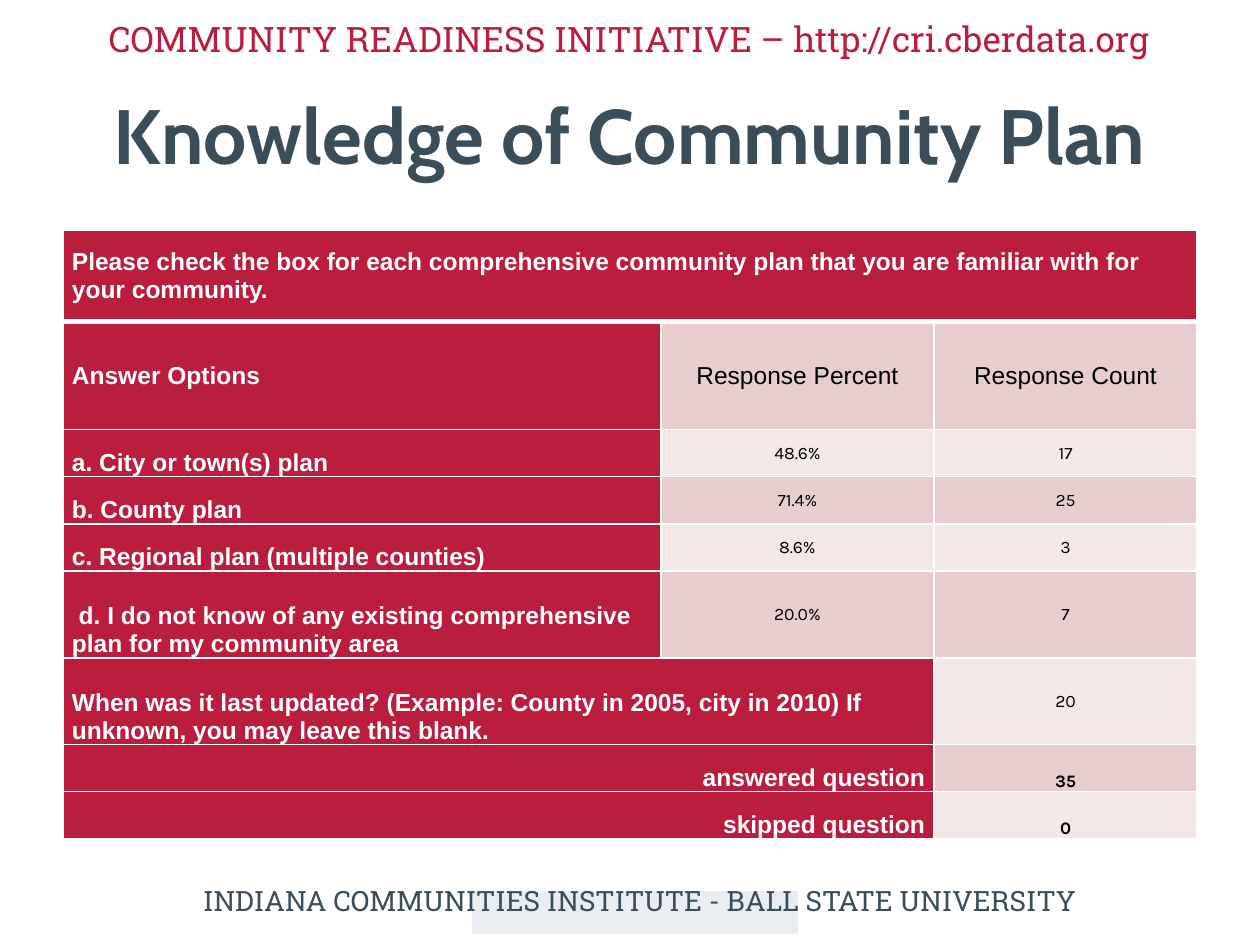
from dataclasses import dataclass

from lxml.etree import SubElement
from pptx import Presentation
from pptx.dml.color import RGBColor
from pptx.enum.shapes import MSO_SHAPE
from pptx.enum.text import MSO_ANCHOR, MSO_AUTO_SIZE, PP_ALIGN
from pptx.oxml.ns import qn
from pptx.util import Cm, Pt


@dataclass(frozen=True)
class Theme:
    red: str = "BA1D3D"
    slate: str = "3B4D59"
    mist: str = "E9ECF1"
    rose: str = "E7CDCE"
    blush: str = "F3E8E8"
    white: str = "FFFFFF"
    black: str = "000000"
    slab: str = "Roboto Slab"
    head: str = "Cabin"
    label: str = "Arial"
    value: str = "Karla"
    title_size: int = 44
    top_size: int = 20
    foot_size: int = 16
    label_size: int = 14
    value_size: int = 10


THEME = Theme()
LEFT, MID, RIGHT = PP_ALIGN.LEFT, PP_ALIGN.CENTER, PP_ALIGN.RIGHT
COLS = [12.05, 5.51, 5.3]
ROWS = [1.83, 2.18, 0.95, 0.95, 0.95, 1.75, 1.75, 0.95, 0.95]
PLANS = [
    ("a. City or town(s) plan", "48.6%", "17"),
    ("b. County plan", "71.4%", "25"),
    ("c. Regional plan (multiple counties)", "8.6%", "3"),
    (" d. I do not know of any existing comprehensive plan for my community area", "20.0%", "7"),
]
TOTALS = [
    ("When was it last updated? (Example: County in 2005, city in 2010) "
     "If unknown, you may leave this blank.", "20", LEFT, False),
    ("answered question", "35", RIGHT, True),
    ("skipped question", "0", RIGHT, True),
]


def write(frame, text, font=THEME.label, size=THEME.label_size,
          color=THEME.white, bold=False, align=MID):
    para = frame.paragraphs[0]
    para.alignment = align
    run = para.add_run()
    run.text = text
    run.font.name = font
    run.font.size = Pt(size)
    run.font.bold = bold
    run.font.color.rgb = RGBColor.from_string(color)


def add_text(slide, box, text, **style):
    frame = slide.shapes.add_textbox(*map(Cm, box)).text_frame
    frame.word_wrap = True
    frame.auto_size = MSO_AUTO_SIZE.SHAPE_TO_FIT_TEXT
    write(frame, text, **style)


def add_block(slide, box, color):
    block = slide.shapes.add_shape(MSO_SHAPE.RECTANGLE, *map(Cm, box))
    block.shadow.inherit = False
    block.fill.solid()
    block.fill.fore_color.rgb = RGBColor.from_string(color)
    block.line.color.rgb = RGBColor.from_string(color)
    block.line.width = Pt(0.75)


def set_title(slide, box, text):
    title = slide.shapes.title
    title.left, title.top, title.width, title.height = map(Cm, box)
    frame = title.text_frame
    frame.auto_size = MSO_AUTO_SIZE.NONE
    frame.vertical_anchor = MSO_ANCHOR.MIDDLE
    write(frame, text, font=THEME.head, size=THEME.title_size, color=THEME.slate, bold=True)


def add_rules(cell, row):
    props = cell._tc.get_or_add_tcPr()
    thick = {"lnB": 0, "lnT": 1}
    for side in ("lnL", "lnR", "lnT", "lnB"):
        width = Pt(3 if thick.get(side) == row else 1)
        line = SubElement(props, qn(f"a:{side}"), w=str(width))
        fill = SubElement(line, qn("a:solidFill"))
        SubElement(fill, qn("a:srgbClr"), val=THEME.white)


def set_cell(cell, text, fill, anchor=MSO_ANCHOR.MIDDLE, pad=0.18, top=0, **style):
    cell.margin_left = cell.margin_right = Cm(pad)
    cell.margin_top, cell.margin_bottom = Cm(top), 0
    cell.vertical_anchor = anchor
    cell.fill.solid()
    cell.fill.fore_color.rgb = RGBColor.from_string(fill)
    write(cell.text_frame, text, **style)


def set_label(cell, text, anchor=MSO_ANCHOR.BOTTOM, align=LEFT):
    set_cell(cell, text, THEME.red, anchor, bold=True, align=align)


def set_value(cell, text, row, strong=False):
    set_cell(cell, text, THEME.blush if row % 2 == 0 else THEME.rose,
             MSO_ANCHOR.BOTTOM if strong else MSO_ANCHOR.MIDDLE,
             pad=0.02, top=0.02, font=THEME.value, size=THEME.value_size,
             color=THEME.black, bold=strong)


def add_survey(slide, left, top):
    table = slide.shapes.add_table(len(ROWS), len(COLS), Cm(left), Cm(top),
                                   Cm(sum(COLS)), Cm(sum(ROWS))).table
    for col, width in zip(table.columns, COLS):
        col.width = Cm(width)
    for index, (row, height) in enumerate(zip(table.rows, ROWS)):
        row.height = Cm(height)
        for cell in row.cells:
            add_rules(cell, index)

    table.cell(0, 0).merge(table.cell(0, 2))
    set_label(table.cell(0, 0), "Please check the box for each comprehensive community plan "
              "that you are familiar with for your community.", MSO_ANCHOR.MIDDLE)
    set_label(table.cell(1, 0), "Answer Options", MSO_ANCHOR.MIDDLE)
    for col, text in enumerate(("Response Percent", "Response Count"), 1):
        set_cell(table.cell(1, col), text, THEME.rose, color=THEME.black)

    for row, (label, *values) in enumerate(PLANS, 2):
        set_label(table.cell(row, 0), label)
        for col, value in enumerate(values, 1):
            set_value(table.cell(row, col), value, row)

    for row, (label, count, align, strong) in enumerate(TOTALS, 2 + len(PLANS)):
        table.cell(row, 0).merge(table.cell(row, 1))
        set_label(table.cell(row, 0), label, align=align)
        set_value(table.cell(row, 2), count, row, strong)


def main():
    deck = Presentation()
    deck.slide_width, deck.slide_height = Cm(25.4), Cm(19.05)
    slide = deck.slides.add_slide(deck.slide_layouts[5])
    add_block(slide, (9.52, 17.98, 6.56, 0.84), THEME.mist)
    add_text(slide, (1.47, 17.68, 22.86, 0.94),
             "INDIANA COMMUNITIES INSTITUTE - BALL STATE UNIVERSITY",
             font=THEME.slab, size=THEME.foot_size, color=THEME.slate)
    add_text(slide, (0.2, 0.23, 24.97, 1.12),
             "COMMUNITY READINESS INITIATIVE – http://cri.cberdata.org",
             font=THEME.slab, size=THEME.top_size, color=THEME.red)
    set_title(slide, (1.27, 1.47, 22.86, 2.46), "Knowledge of Community Plan")
    add_survey(slide, 1.27, 4.65)
    deck.save("out.pptx")


if __name__ == "__main__":
    main()
